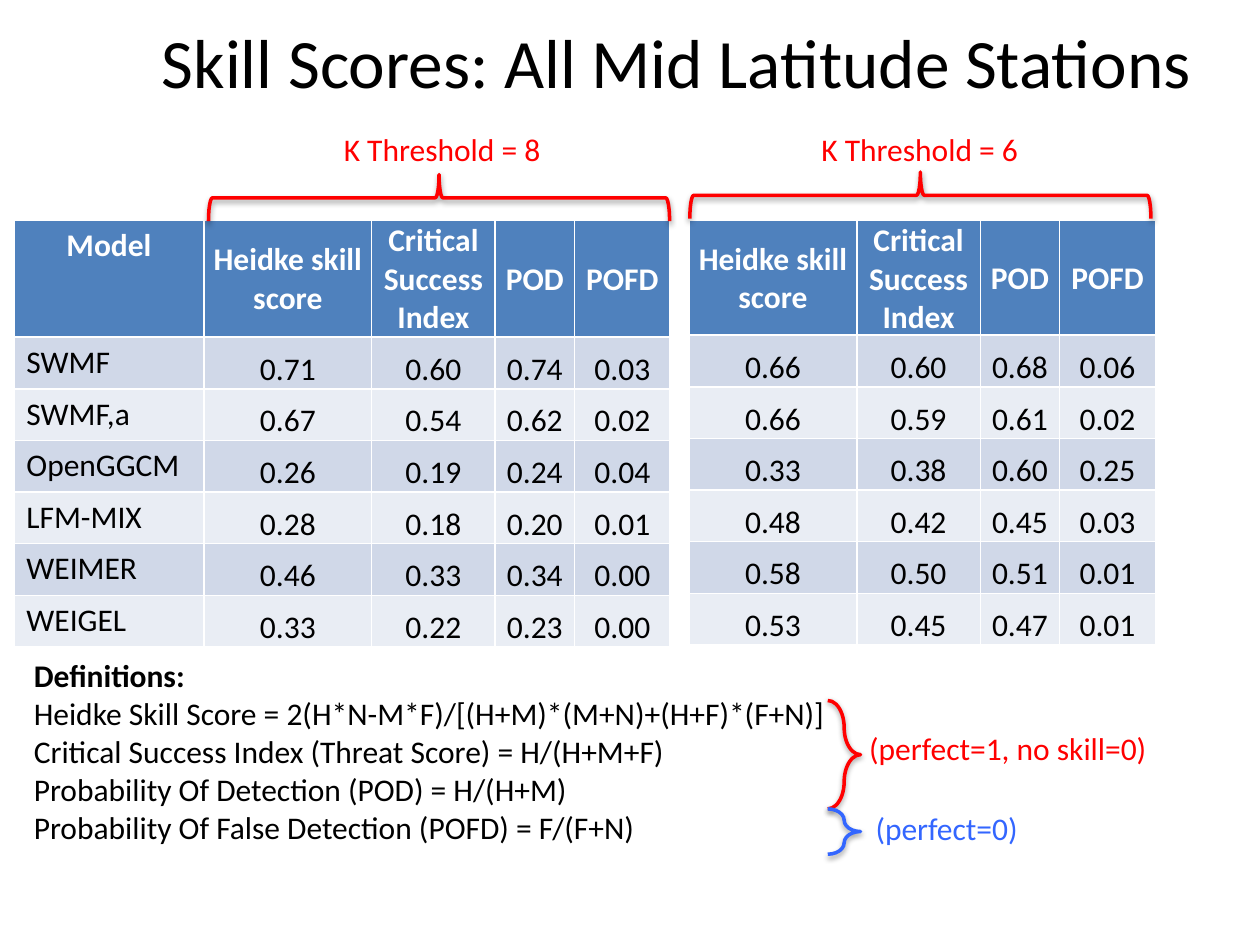
from lxml.etree import SubElement
from pptx import Presentation
from pptx.dml.color import RGBColor
from pptx.enum.shapes import MSO_SHAPE
from pptx.enum.text import MSO_ANCHOR, MSO_AUTO_SIZE, PP_ALIGN
from pptx.oxml.ns import qn
from pptx.util import Inches, Pt

BLACK = RGBColor(0x00, 0x00, 0x00)
WHITE = RGBColor(0xFF, 0xFF, 0xFF)
RED = RGBColor(0xFF, 0x00, 0x00)
BLUE = RGBColor(0x33, 0x66, 0xFF)
HEAD = RGBColor(0x4F, 0x81, 0xBD)
BANDS = RGBColor(0xD0, 0xD8, 0xE8), RGBColor(0xE9, 0xED, 0xF4)

FONT = "Calibri"
SIZE = 18
TOP, TALL, ROW = 1.75, 3.35, 0.41
SCORE_COLS = [1.33, 0.98, 0.63, 0.76]
SCORE_HEADS = ["Heidke skill score", "Critical Success Index", "POD", "POFD"]

MODELS = ["SWMF", "SWMF,a", "OpenGGCM", "LFM-MIX", "WEIMER", "WEIGEL"]
K8 = [
    ["0.71", "0.60", "0.74", "0.03"],
    ["0.67", "0.54", "0.62", "0.02"],
    ["0.26", "0.19", "0.24", "0.04"],
    ["0.28", "0.18", "0.20", "0.01"],
    ["0.46", "0.33", "0.34", "0.00"],
    ["0.33", "0.22", "0.23", "0.00"],
]
K6 = [
    ["0.66", "0.60", "0.68", "0.06"],
    ["0.66", "0.59", "0.61", "0.02"],
    ["0.33", "0.38", "0.60", "0.25"],
    ["0.48", "0.42", "0.45", "0.03"],
    ["0.58", "0.50", "0.51", "0.01"],
    ["0.53", "0.45", "0.47", "0.01"],
]
DEFS = [
    "Definitions:",
    "Heidke Skill Score = 2(H*N-M*F)/[(H+M)*(M+N)+(H+F)*(F+N)]",
    "Critical Success Index (Threat Score) = H/(H+M+F)",
    "Probability Of Detection (POD) = H/(H+M)",
    "Probability Of False Detection (POFD) = F/(F+N)",
]


def style(para, color=BLACK, size=SIZE, bold=False):
    font = para.font
    font.name, font.size, font.bold = FONT, Pt(size), bold
    font.color.rgb = color


def add_title(slide, text):
    title = slide.shapes.title
    title.left, title.top = Inches(0.87), Inches(0.04)
    title.width, title.height = Inches(9), Inches(0.88)
    title.text_frame.text = text
    title.text_frame.vertical_anchor = MSO_ANCHOR.MIDDLE
    para = title.text_frame.paragraphs[0]
    para.alignment = PP_ALIGN.CENTER
    style(para, size=39.6)


def add_text(slide, box, lines, color=BLACK, headed=False):
    """Add an unwrapped text box; headed makes its first line bold."""
    frame = slide.shapes.add_textbox(*map(Inches, box)).text_frame
    frame.text = "\n".join(lines)
    frame.word_wrap = False
    frame.auto_size = MSO_AUTO_SIZE.SHAPE_TO_FIT_TEXT
    for i, para in enumerate(frame.paragraphs):
        style(para, color, bold=headed and i == 0)


def fill_cell(cell, text, row, named):
    """Format one cell; named marks the column of model names."""
    head = row == 0
    cell.text = text
    cell.fill.solid()
    cell.fill.fore_color.rgb = HEAD if head else BANDS[(row - 1) % 2]
    para = cell.text_frame.paragraphs[0]
    style(para, WHITE if head else BLACK, bold=head)
    if head or not named:
        para.alignment = PP_ALIGN.CENTER
    if not named:
        cell.vertical_anchor = MSO_ANCHOR.MIDDLE if head else MSO_ANCHOR.BOTTOM
        cell.margin_left = cell.margin_right = cell.margin_top = Inches(0.01)
        cell.margin_bottom = 0


def add_scores(slide, left, cols, rows, top_row, named=False):
    frame = slide.shapes.add_table(
        len(rows), len(cols), Inches(left), Inches(TOP),
        Inches(sum(cols)), Inches(TALL))
    table = frame.table
    for col, width in zip(table.columns, cols):
        col.width = Inches(width)
    for r, texts in enumerate(rows):
        table.rows[r].height = Inches(ROW if r else top_row)
        for c, text in enumerate(texts):
            fill_cell(table.cell(r, c), text, r, named and c == 0)
    frame.height = Inches(TALL)


def add_brace(slide, box, color, turn=0, curve=None):
    brace = slide.shapes.add_shape(MSO_SHAPE.RIGHT_BRACE, *map(Inches, box))
    brace.rotation = turn
    if curve:
        brace.adjustments[0] = curve
    brace.fill.background()
    brace.line.color.rgb = color
    brace.line.width = Pt(2)
    brace.shadow.inherit = False
    effects = brace._element.spPr.find(qn("a:effectLst"))
    shade = SubElement(effects, qn("a:outerShdw"), blurRad="40000",
                       dist="20000", dir="5400000", rotWithShape="0")
    tint = SubElement(shade, qn("a:srgbClr"), val="000000")
    SubElement(tint, qn("a:alpha"), val="38000")


def main():
    deck = Presentation()
    deck.slide_width, deck.slide_height = Inches(10), Inches(7.5)
    slide = deck.slides.add_slide(deck.slide_layouts[5])
    add_title(slide, "Skill Scores: All Mid Latitude Stations")

    named = [[name] + vals for name, vals in zip(MODELS, K8)]
    add_scores(slide, 0.11, [1.51] + SCORE_COLS,
               [["Model"] + SCORE_HEADS] + named, ROW, named=True)
    add_text(slide, (0.17, 5.16, 6.67, 1.62), DEFS, headed=True)
    add_scores(slide, 5.47, SCORE_COLS, [SCORE_HEADS] + K6, 0.66)

    add_brace(slide, (3.3, -0.26, 0.37, 3.66), RED, turn=270)
    add_brace(slide, (7.12, -0.28, 0.37, 3.66), RED, turn=270)
    add_text(slide, (2.63, 0.98, 1.79, 0.4), ["K Threshold = 8"], RED)
    add_text(slide, (6.42, 0.98, 1.79, 0.4), ["K Threshold = 6"], RED)

    add_text(slide, (6.8, 5.74, 2.43, 0.4), ["(perfect=1, no skill=0)"], RED)
    add_brace(slide, (6.57, 5.56, 0.26, 0.86), RED, curve=2.46)
    add_brace(slide, (6.57, 6.42, 0.26, 0.36), BLUE, curve=2.46)
    add_text(slide, (6.85, 6.37, 1.35, 0.4), ["(perfect=0)"], BLUE)
    deck.save("out.pptx")


if __name__ == "__main__":
    main()
